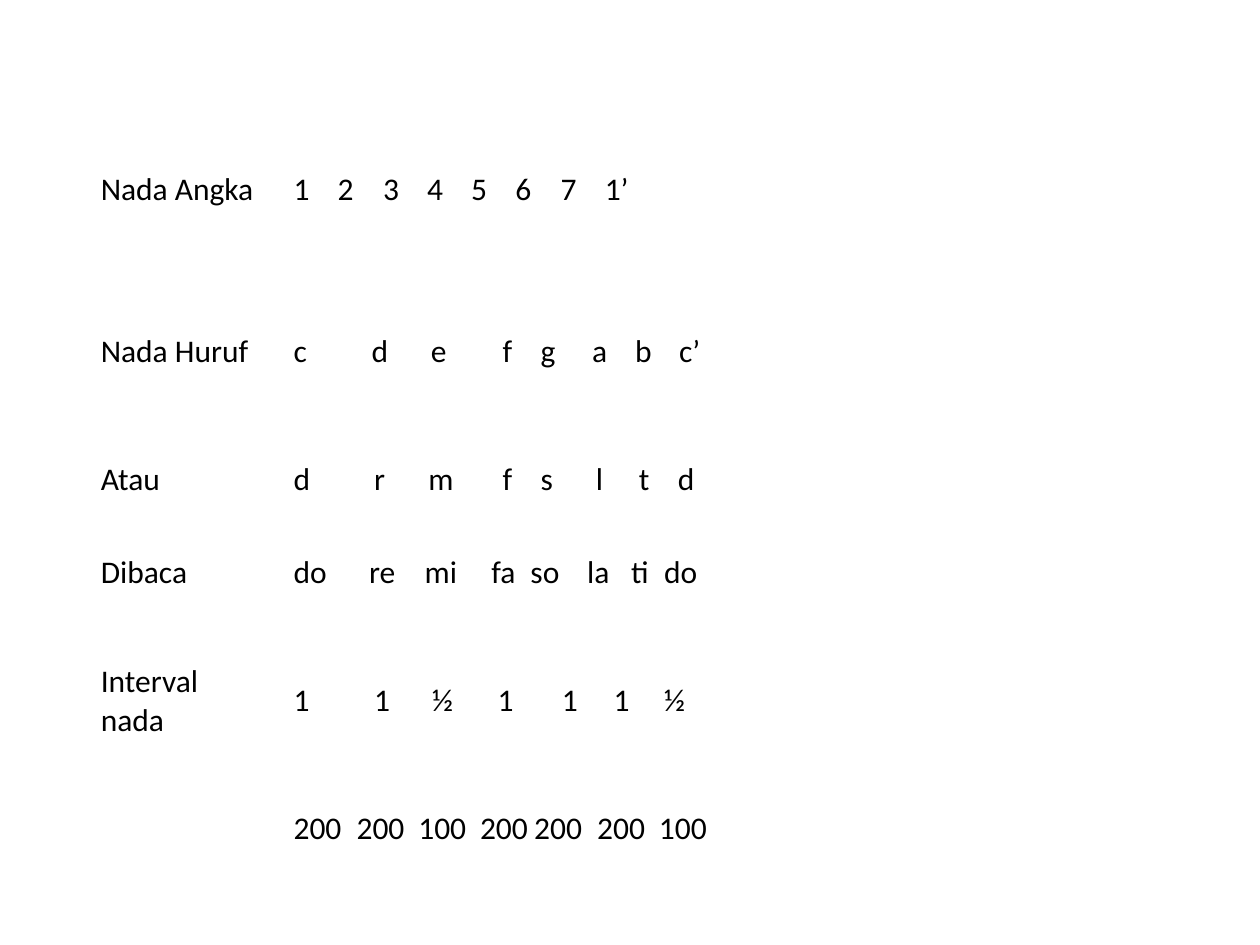
from lxml.etree import SubElement
from pptx import Presentation
from pptx.dml.color import RGBColor
from pptx.enum.text import MSO_ANCHOR
from pptx.oxml.ns import qn
from pptx.util import Inches, Pt

COLORS = {"text": "000000", "fill": "FFFFFF"}

# Label, row height, notes, tab stops in inches from the start of the cell text
ROWS = [
    ("Nada Angka", 1.29, "1 2 3 4 5 6 7 1’",
     [0.35, 0.71, 1.06, 1.41, 1.76, 2.12, 2.47]),
    ("Nada Huruf", 1.29, "c d e f g a b c’",
     [0.62, 1.09, 1.66, 1.96, 2.37, 2.71, 3.06]),
    ("Atau", 0.74, "d r m f s l t d",
     [0.64, 1.07, 1.66, 1.96, 2.4, 2.74, 3.05]),
    ("Dibaca", 0.74, "do re mi fa so la ti do",
     [0.6, 1.04, 1.57, 1.88, 2.33, 2.68, 2.94]),
    ("Interval nada", 1.29, "1 1 ½ 1 1 1 ½",
     [0.64, 1.1, 1.62, 2.13, 2.54, 2.94]),
    ("", 0.74, "200 200 100 200 200 200 100",
     [0.5, 0.99, 1.48, 1.91, 2.41, 2.9]),
]


def write(cell, text, stops=()):
    """Fill one cell, with its text set on the given tab stops."""
    cell.fill.solid()
    cell.fill.fore_color.rgb = RGBColor.from_string(COLORS["fill"])
    cell.vertical_anchor = MSO_ANCHOR.MIDDLE
    para = cell.text_frame.paragraphs[0]
    if text:
        para.add_run().text = text
    if stops:
        tabs = SubElement(para._p.get_or_add_pPr(), qn("a:tabLst"))
        for stop in stops:
            SubElement(tabs, qn("a:tab"), pos=str(Inches(stop)), algn="l")
    para.font.name = "Calibri"
    para.font.size = Pt(18)
    para.font.color.rgb = RGBColor.from_string(COLORS["text"])


prs = Presentation()
prs.slide_width, prs.slide_height = Inches(10), Inches(7.5)
slide = prs.slides.add_slide(prs.slide_layouts[6])

table = slide.shapes.add_table(
    len(ROWS), 2, Inches(0.7), Inches(0.86), Inches(8.52), Inches(6.09)
).table
table.first_row = False
table.horz_banding = False
table.columns[0].width = Inches(1.53)
table.columns[1].width = Inches(6.98)

for i, (label, height, notes, stops) in enumerate(ROWS):
    table.rows[i].height = Inches(height)
    write(table.cell(i, 0), label)
    write(table.cell(i, 1), notes.replace(" ", "\t"), stops)

prs.save("out.pptx")
